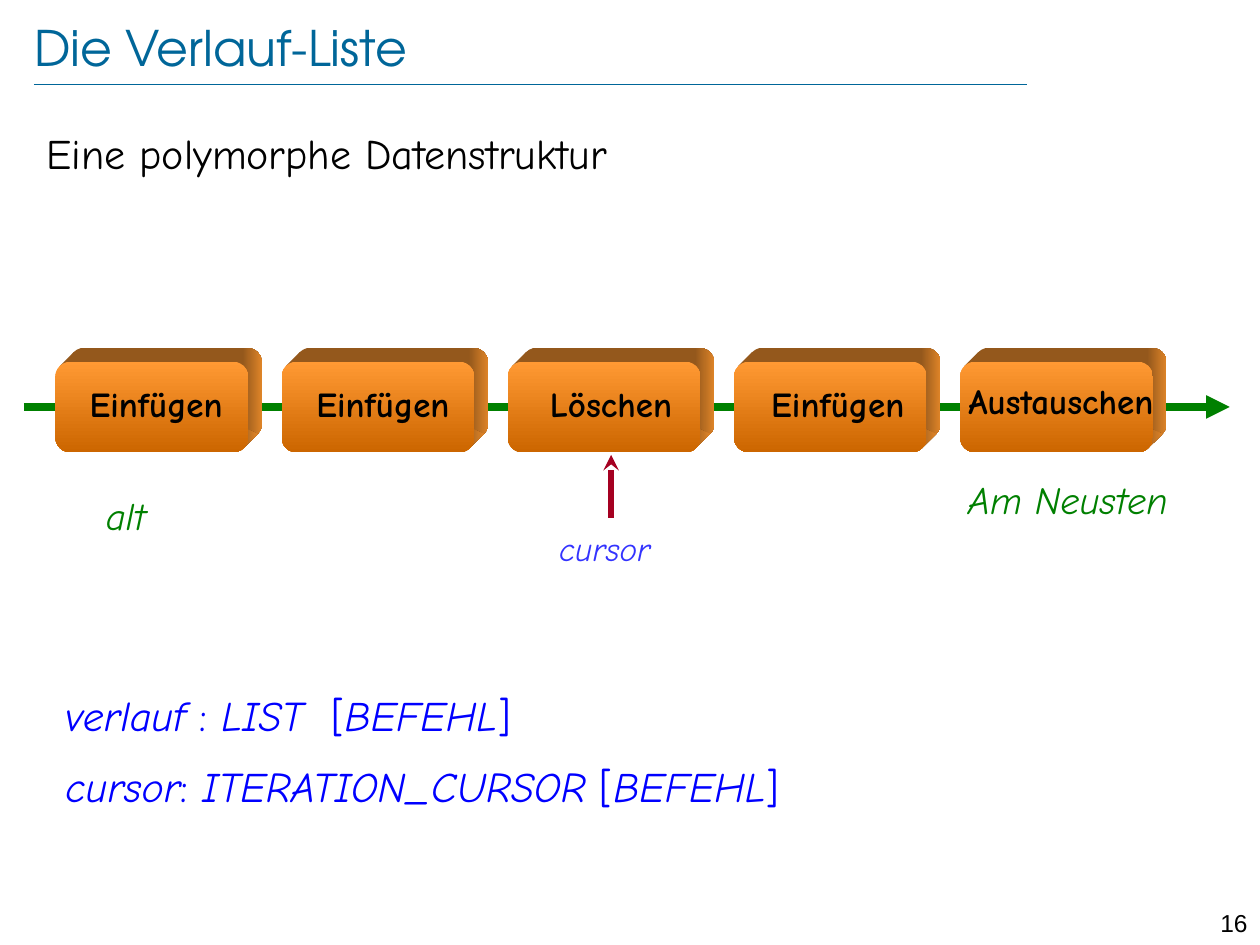
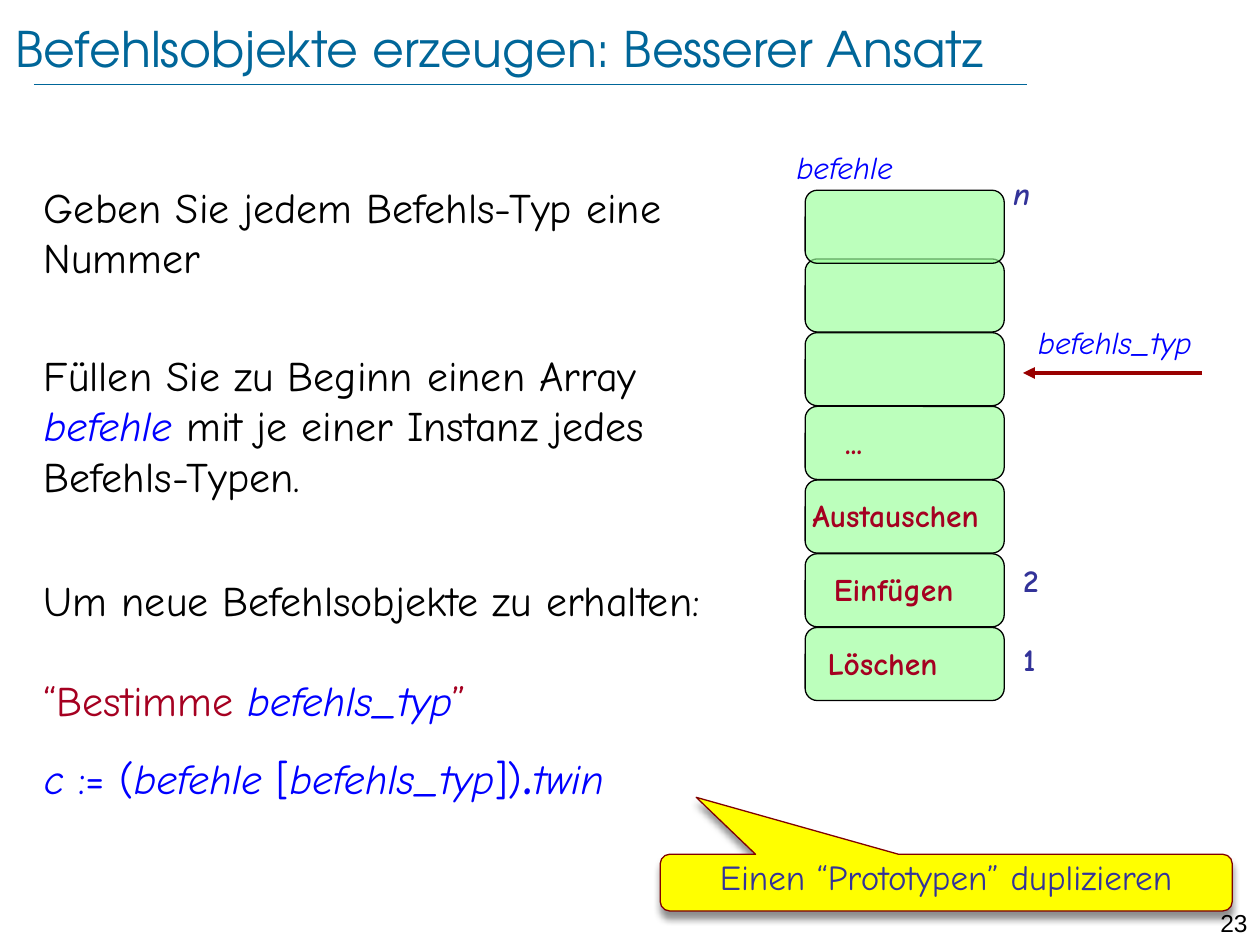
import lxml.etree
import pptx
import pptx.dml.color
import pptx.enum.shapes
import pptx.enum.text
import pptx.oxml.ns
import pptx.util

Inches = pptx.util.Inches
Pt = pptx.util.Pt
RGBColor = pptx.dml.color.RGBColor
qn = pptx.oxml.ns.qn
SHAPE = pptx.enum.shapes.MSO_SHAPE
ANCHOR = pptx.enum.text.MSO_ANCHOR
LEFT, CENTER, RIGHT = (pptx.enum.text.PP_ALIGN.LEFT, pptx.enum.text.PP_ALIGN.CENTER,
                       pptx.enum.text.PP_ALIGN.RIGHT)

BLACK = RGBColor(0, 0, 0)
TEAL = RGBColor(0x00, 0x66, 0x99)
BLUE = RGBColor(0x00, 0x00, 0xFF)
SOFT_BLUE = RGBColor(0x33, 0x33, 0xFF)
NAVY = RGBColor(0x33, 0x33, 0x99)
GREEN = RGBColor(0x00, 0x80, 0x00)
MINT = RGBColor(0x99, 0xFF, 0x99)
RED = RGBColor(0xA5, 0x00, 0x21)
DARK_RED = RGBColor(0x99, 0x00, 0x00)
MAROON = RGBColor(0x80, 0x00, 0x00)
YELLOW = RGBColor(0xFF, 0xFF, 0x00)
ORANGE = RGBColor(0xFF, 0x99, 0x33)
RUST = RGBColor(0xCC, 0x66, 0x00)
BROWN = RGBColor(0x94, 0x58, 0x1C)
AMBER = RGBColor(0xDE, 0x84, 0x28)

BASE = {"name": "Comic Neue", "size": 24, "color": BLACK}
TITLE = {"name": "TeX Gyre Adventor", "size": 28, "color": TEAL}
NUMBER = {"name": "Arial", "size": 14}
CODE = {"color": BLUE}
VAR = {"color": BLUE, "italic": True}
NOTE = {"color": RED}
LABEL = {"size": 20, "bold": True}
END = {"size": 22, "color": GREEN, "italic": True}
CELL = {"size": 18, "color": RED, "bold": True}
INDEX = {"size": 18, "color": NAVY, "bold": True}
NAME = {**VAR, "size": 18}
TIGHT = {"inset": (0, 0.05), "spacing": 0.8}


class Deck:
    def __init__(self):
        self.show = pptx.Presentation()
        self.show.slide_width, self.show.slide_height = Inches(10), Inches(7.5)

    def start(self, title, box, number):
        """Add a slide with its title, rule and page number."""
        self.slide = self.show.slides.add_slide(self.show.slide_layouts[6])
        self.line((0.27, 0.67), (8.15, 0.67), TEAL, 0.25)
        self.text((9.45, 7.16, 0.55, 0.24), number, NUMBER, align=RIGHT)
        self.text(box, title, TITLE, inset=(0, 0), anchor=ANCHOR.MIDDLE)

    def text(self, box, words, style=None, **layout):
        shape = self.slide.shapes.add_textbox(*map(Inches, box))
        self.letter(shape, [(0, [(words, style or {})])], **layout)

    def body(self, box, paras):
        self.letter(self.slide.shapes.add_textbox(*map(Inches, box)), paras)

    def letter(self, shape, paras, align=LEFT, inset=(0.1, 0.05), anchor=ANCHOR.TOP,
               spacing=None):
        """Fill a shape from (space before, [(words, style), ...]) pairs."""
        frame = shape.text_frame
        frame.word_wrap = True
        frame.vertical_anchor = anchor
        frame.margin_left = frame.margin_right = Inches(inset[0])
        frame.margin_top = frame.margin_bottom = Inches(inset[1])
        for i, (gap, runs) in enumerate(paras):
            para = frame.add_paragraph() if i else frame.paragraphs[0]
            para.alignment = align
            para.space_before = Pt(gap)
            if spacing:
                para.line_spacing = spacing
            for words, style in runs:
                for j, part in enumerate(words.split("\n")):
                    if j:
                        para.add_line_break()
                    if part:
                        self.phrase(para, part, {**BASE, **style})

    def phrase(self, para, words, style):
        run = para.add_run()
        run.text = words
        for key, value in style.items():
            if key == "color":
                run.font.color.rgb = value
            else:
                setattr(run.font, key, Pt(value) if key == "size" else value)

    def line(self, tail, tip, color, width, head=None):
        points = map(Inches, (*tail, *tip))
        line = self.slide.shapes.add_connector(pptx.enum.shapes.MSO_CONNECTOR.STRAIGHT, *points)
        line.line.color.rgb = color
        line.line.width = Pt(width)
        props = line._element.spPr
        if head:
            lxml.etree.SubElement(props.find(qn("a:ln")), qn("a:tailEnd"), type=head)
        lxml.etree.SubElement(props, qn("a:effectLst"))

    def shape(self, kind, box, fill, edge):
        shape = self.slide.shapes.add_shape(kind, *map(Inches, box))
        shape.shadow.inherit = False
        shape.fill.solid()
        shape.fill.fore_color.rgb = fill
        shape.line.color.rgb = edge
        shape.line.width = Pt(0.75)
        return shape

    def shade(self, shape, angle, *stops):
        """Give a shape a two-stop gradient and no outline."""
        shape.shadow.inherit = False
        shape.line.fill.background()
        shape.fill.gradient()
        shape.fill.gradient_angle = angle
        for stop, (place, color) in zip(shape.fill.gradient_stops, stops):
            stop.position = place
            stop.color.rgb = color

    def block(self, x, y, wide, high, depth=0.11, curve=0.035):
        """Draw a rounded box with depth towards the upper right."""
        shapes = self.slide.shapes
        sides = (0.9, BROWN), (1, AMBER)
        back = shapes.add_shape(SHAPE.ROUNDED_RECTANGLE,
                                *map(Inches, (x + depth, y - depth, wide, high)))
        self.shade(back, 0, *sides)
        near, far = (x + curve, y + curve), (x + wide - curve, y + high - curve)
        raised = [(a + depth, b - depth) for a, b in (near, far)]
        outline = shapes.build_freeform(*map(Inches, near), scale=1.0)
        outline.add_line_segments([tuple(map(Inches, p)) for p in (*raised, far)])
        self.shade(outline.convert_to_shape(), 0, *sides)
        front = shapes.add_shape(SHAPE.ROUNDED_RECTANGLE, *map(Inches, (x, y, wide, high)))
        self.shade(front, 270, (0, ORANGE), (1, RUST))

    def cell(self, box):
        cell = self.shape(SHAPE.ROUNDED_RECTANGLE, box, MINT, BLACK)
        color = cell._element.spPr.find(qn("a:solidFill"))[0]
        lxml.etree.SubElement(color, qn("a:alpha"), val="65000")

    def callout(self, box, point, words, style):
        shape = self.shape(SHAPE.ROUNDED_RECTANGULAR_CALLOUT, box, YELLOW, MAROON)
        for i, value in enumerate((*point, 0.167)):
            shape.adjustments[i] = value
        effects = shape._element.spPr.find(qn("a:effectLst"))
        cast = lxml.etree.SubElement(effects, qn("a:outerShdw"), blurRad=str(Pt(4)),
                                     dist=str(Pt(4)), dir="5400000", rotWithShape="0")
        tint = lxml.etree.SubElement(cast, qn("a:srgbClr"), val=str(BLACK))
        lxml.etree.SubElement(tint, qn("a:alpha"), val="43000")
        self.letter(shape, [(0, [(words, style)])], align=CENTER, **TIGHT)


def add_history(deck):
    deck.start("Die Verlauf-Liste", (0.27, 0.13, 8.69, 0.48), "16")
    deck.text((0.27, 0.96, 9.4, 0.6), "Eine polymorphe Datenstruktur")
    deck.body((0.42, 5.42, 9.17, 1.11), [
        (0, [("verlauf ", VAR), (": ", CODE), ("LIST  ", VAR), ("[", CODE),
             ("BEFEHL", VAR), ("]", CODE)]),
        (12, [("cursor", VAR), (": ", CODE), ("ITERATION_CURSOR", VAR), (" [", CODE),
              ("BEFEHL", VAR), ("]", CODE)]),
    ])
    deck.line((0.19, 3.23), (9.76, 3.23), GREEN, 4.5, "triangle")
    labels = [("Einfügen", 1.24, 2.99), ("Einfügen", 3.04, 2.99), ("Löschen", 4.85, 2.99),
              ("Einfügen", 6.65, 2.99), ("Austauschen", 8.42, 2.96)]
    for i, (word, middle, top) in enumerate(labels):
        deck.block(0.44 + 1.795 * i, 2.87, 1.53, 0.72)
        deck.text((middle - 0.95, top, 1.9, 0.44), word, LABEL, align=CENTER)
    deck.text((0.32, 3.86, 1.36, 0.47), "alt", END, align=CENTER)
    deck.text((7.4, 3.73, 2.15, 0.47), "Am Neusten", END, align=CENTER)
    deck.line((4.85, 4.11), (4.85, 3.61), RED, 3, "stealth")
    deck.text((4.34, 4.14, 1.04, 0.42), "cursor",
              {"size": 19, "color": SOFT_BLUE, "italic": True})


def add_array(deck):
    deck.start("Befehlsobjekte erzeugen: Besserer Ansatz", (0.12, 0, 9.06, 0.76), "23")
    deck.body((0.25, 1.39, 9.75, 5.59), [
        (0, [("Geben Sie jedem Befehls-Typ eine\nNummer", {})]),
        (38.5, [("Füllen Sie zu Beginn einen Array\n", {}), ("befehle ", VAR),
                ("mit je einer Instanz jedes\nBefehls-Typen.", {})]),
        (42, [("Um neue Befehlsobjekte zu erhalten:", {})]),
        (28.5, [("“Bestimme ", NOTE), ("befehls_typ", VAR), ("”", NOTE)]),
        (0, [("c", VAR), (" := (", CODE), ("befehle ", VAR), ("[", CODE),
             ("befehls_typ", VAR), ("])", CODE), (".", {**CODE, "size": 40}),
             ("twin", VAR)]),
    ])
    words = [("Löschen", 6.47), ("Einfügen", 6.52), ("Austauschen", 6.35), ("...", 6.61)]
    for i in range(7):
        top = max(4.98 - 0.585 * i, 1.51)
        deck.cell((6.39, top, 1.58, 0.58))
        if i < len(words):
            word, left = words[i]
            deck.text((left, top + 0.08, 1.74, 0.4), word, CELL)
    for word, left, top in (("1", 8.12, 5.09), ("2", 8.12, 4.46), ("n", 8.04, 1.39)):
        style = {**INDEX, "italic": word == "n"}
        deck.text((left, top, 0.39, 0.35), word, style, **TIGHT)
    deck.line((9.54, 2.96), (8.12, 2.96), DARK_RED, 2.25, "triangle")
    deck.text((7.65, 2.57, 2.4, 0.35), "befehls_typ", NAME, align=CENTER, **TIGHT)
    deck.callout((5.24, 6.78, 4.54, 0.45), (-0.437, -1.505),
                 "Einen “Prototypen” duplizieren", {"size": 20, "color": NAVY})
    deck.text((5.72, 1.18, 1.97, 0.35), "befehle", NAME, align=CENTER, **TIGHT)


def main():
    deck = Deck()
    add_history(deck)
    add_array(deck)
    deck.show.save("out.pptx")


if __name__ == "__main__":
    main()
